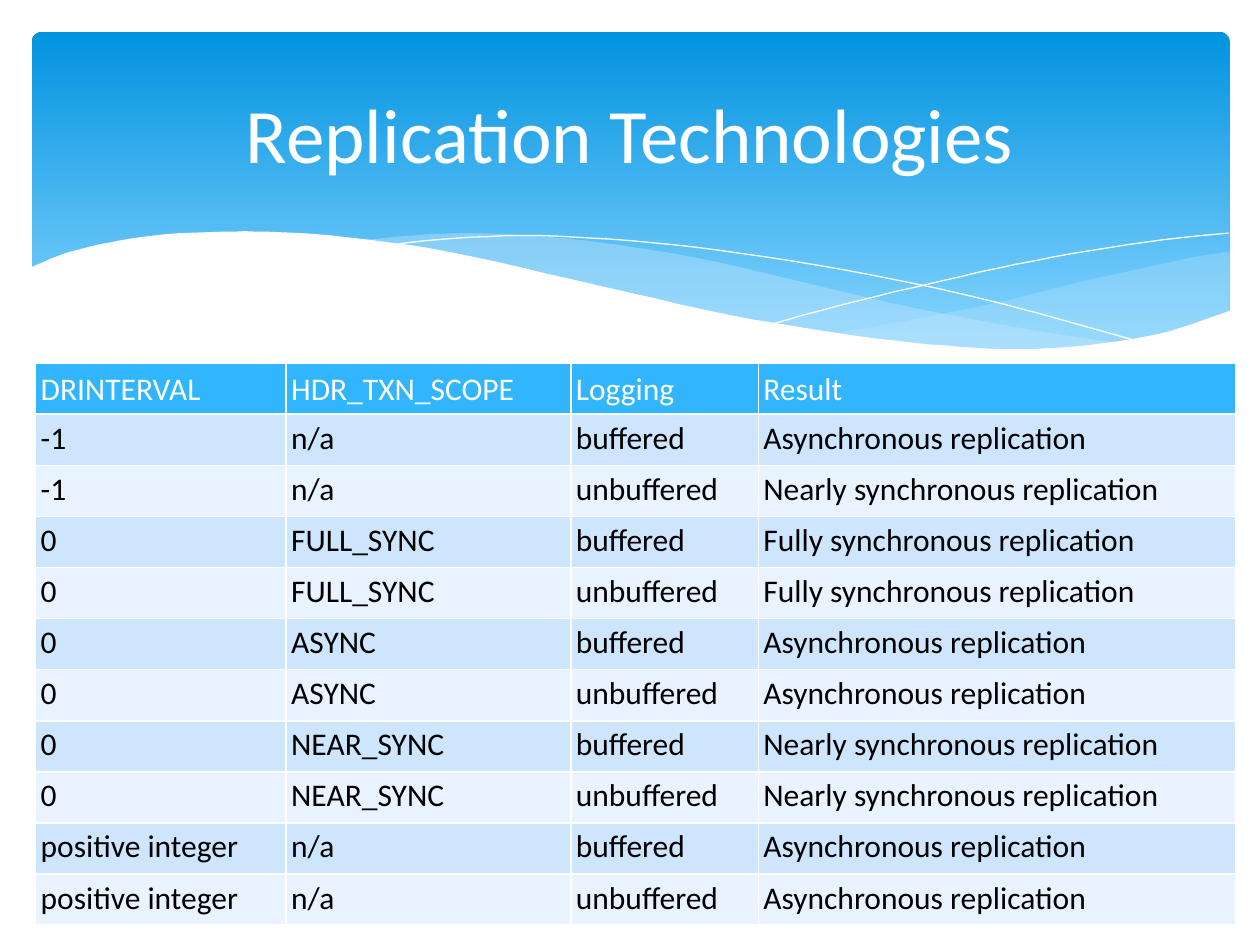
from lxml.etree import SubElement
from pptx import Presentation
from pptx.dml.color import RGBColor
from pptx.enum.shapes import MSO_SHAPE as Shape
from pptx.enum.text import MSO_ANCHOR as Anchor, PP_ALIGN as Align
from pptx.oxml.ns import qn
from pptx.util import Cm, Pt

WHITE = RGBColor(0xFF, 0xFF, 0xFF)
BLACK = RGBColor(0x00, 0x00, 0x00)
DEEP_BLUE = RGBColor(0x02, 0x93, 0xE0)
LIGHT_BLUE = RGBColor(0x83, 0xD3, 0xFE)
MIST = RGBColor(0xC6, 0xE7, 0xFC)
HEADER_BLUE = RGBColor(0x31, 0xB6, 0xFD)
BANDS = (RGBColor(0xCE, 0xE5, 0xFE), RGBColor(0xE8, 0xF3, 0xFF))
FONT = "Calibri"

HEADING = "Replication Technologies"
HEADERS = ("DRINTERVAL", "HDR_TXN_SCOPE", "Logging", "Result")
ASYNC = "Asynchronous replication"
NEARLY = "Nearly synchronous replication"
FULLY = "Fully synchronous replication"
SETTINGS = [
    ("-1", "n/a", ASYNC, NEARLY),
    ("0", "FULL_SYNC", FULLY, FULLY),
    ("0", "ASYNC", ASYNC, ASYNC),
    ("0", "NEAR_SYNC", NEARLY, NEARLY),
    ("positive integer", "n/a", ASYNC, ASYNC),
]
COLUMN_WIDTHS = (5.05, 5.74, 3.78, 9.63)
ROW_HEIGHT = 1.03

# Wave knots are in hundredths of a centimetre
RIGHT_SWELL = [
    [(2479, 508), (2408, 518), (2301, 541), (2187, 566), (2045, 602),
     (1913, 630), (1793, 653), (1679, 673)],
    [(1679, 673), (1791, 688), (1892, 699), (2012, 704), (2121, 704),
     (2215, 696), (2299, 683), (2375, 665), (2446, 640), (2479, 627)],
]
MIDDLE_SWELL = [
    [(2268, 693), (2126, 673), (1969, 645), (1793, 610), (1598, 564),
     (1445, 528), (1306, 503), (1181, 485), (1067, 475), (965, 470),
     (874, 472), (795, 478), (726, 485)],
    [(726, 485), (820, 498), (919, 516), (1026, 536), (1140, 564),
     (1346, 610), (1527, 648), (1689, 676), (1834, 696), (1963, 704),
     (2078, 706), (2177, 704), (2268, 693)],
]
FALLING_LINE = [
    [(785, 495), (833, 488), (922, 480), (1057, 475), (1191, 480),
     (1354, 493), (1544, 518), (1765, 556), (2019, 612), (2304, 691)],
]
RISING_LINE = [
    [(1557, 653), (1707, 612), (1900, 566), (2047, 533), (2200, 505),
     (2347, 483), (2477, 470)],
]
FOREGROUND = [
    [(2482, 625), (2413, 650), (2337, 673), (2253, 688), (2159, 699),
     (2055, 704), (1933, 699), (1798, 686), (1646, 665), (1471, 635),
     (1278, 592), (1135, 559), (993, 526), (864, 500), (742, 483),
     (635, 472), (536, 467), (450, 467), (335, 472), (241, 485),
     (170, 500), (117, 516), (58, 541)],
    [(58, 836), (2482, 836)],
]
WAVES = [
    (RIGHT_SWELL, MIST, 29),
    (MIDDLE_SWELL, MIST, 40),
    (FALLING_LINE, None, None),
    (RISING_LINE, None, None),
    (FOREGROUND, WHITE, 100),
]


def smooth_curve(knots, steps=4):
    padded = [knots[0], *knots, knots[-1]]
    points = [knots[0]]
    for a, b, c, d in zip(padded, padded[1:], padded[2:], padded[3:]):
        for step in range(1, steps + 1):
            t = step / steps
            points.append(tuple(
                0.5 * (2 * q + (r - p) * t + (2 * p - 5 * q + 4 * r - s) * t**2
                       + (3 * q - p - 3 * r + s) * t**3)
                for p, q, r, s in zip(a, b, c, d)))
    return points


def add_wave(shapes, curves, color, opacity):
    points = [point for knots in curves for point in smooth_curve(knots)]
    builder = shapes.build_freeform(*points[0], scale=Cm(0.01))
    builder.add_line_segments(points[1:], close=color is not None)
    wave = builder.convert_to_shape()
    wave.shadow.inherit = False
    if color is None:
        wave.fill.background()
        wave.line.color.rgb = WHITE
        wave.line.width = Pt(0)
        return
    wave.line.fill.background()
    wave.fill.solid()
    wave.fill.fore_color.rgb = color
    if opacity < 100:
        tint = wave.fill._xPr.find(qn("a:solidFill"))[0]
        SubElement(tint, qn("a:alpha"), val=str(opacity * 1000))


def add_banner(shapes):
    banner = shapes.add_shape(Shape.ROUNDED_RECTANGLE, Cm(0.64), Cm(0.64), Cm(24.15), Cm(6.86))
    banner.adjustments[0] = 0.03
    banner.shadow.inherit = False
    banner.line.fill.background()
    banner.fill.gradient()
    banner.fill.gradient_angle = 270
    stops = zip(banner.fill.gradient_stops, (0, 0.9), (DEEP_BLUE, LIGHT_BLUE))
    for stop, position, color in stops:
        stop.position = position
        stop.color.rgb = color


def set_font(paragraph, size, color):
    for attribute, value in {"name": FONT, "size": Pt(size), "bold": False}.items():
        setattr(paragraph.font, attribute, value)
    paragraph.font.color.rgb = color


def format_cell(cell, text, fill, color, anchor):
    cell.text = text
    margins = ("margin_left", "margin_top", "margin_right", "margin_bottom")
    for attribute, value in {**dict.fromkeys(margins, Cm(0.1)), "vertical_anchor": anchor}.items():
        setattr(cell, attribute, value)
    set_font(cell.text_frame.paragraphs[0], 18, color)
    properties = cell._tc.get_or_add_tcPr()
    for side in ("lnL", "lnR", "lnT", "lnB"):
        border = SubElement(properties, qn(f"a:{side}"), w=str(Pt(1)))
        SubElement(SubElement(border, qn("a:solidFill")), qn("a:srgbClr"), val=str(WHITE))
    cell.fill.solid()
    cell.fill.fore_color.rgb = fill


def add_settings_table(shapes):
    rows = [HEADERS]
    for interval, scope, buffered, unbuffered in SETTINGS:
        rows.append((interval, scope, "buffered", buffered))
        rows.append((interval, scope, "unbuffered", unbuffered))
    table = shapes.add_table(len(rows), len(HEADERS), Cm(0.72), Cm(7.32),
                             Cm(sum(COLUMN_WIDTHS)), Cm(ROW_HEIGHT * len(rows))).table
    for column, width in zip(table.columns, COLUMN_WIDTHS):
        column.width = Cm(width)
    for r, row in enumerate(rows):
        style = (BANDS[(r - 1) % 2], BLACK, Anchor.TOP) if r else (HEADER_BLUE, WHITE, Anchor.BOTTOM)
        for c, text in enumerate(row):
            format_cell(table.cell(r, c), text, *style)


def main():
    deck = Presentation()
    deck.slide_width, deck.slide_height = Cm(25.4), Cm(19.05)
    slide = deck.slides.add_slide(deck.slide_layouts[5])
    shapes = slide.shapes
    add_banner(shapes)
    for wave in WAVES:
        add_wave(shapes, *wave)
    add_settings_table(shapes)

    heading = shapes.title
    place = {"left": Cm(1.27), "top": Cm(0.94), "width": Cm(22.86), "height": Cm(3.48)}
    for attribute, value in place.items():
        setattr(heading, attribute, value)
    heading.text_frame.text = HEADING
    heading.text_frame.vertical_anchor = Anchor.MIDDLE
    heading.text_frame.paragraphs[0].alignment = Align.CENTER
    set_font(heading.text_frame.paragraphs[0], 44, WHITE)
    shapes._spTree.append(heading._element)
    deck.save("out.pptx")


if __name__ == "__main__":
    main()
